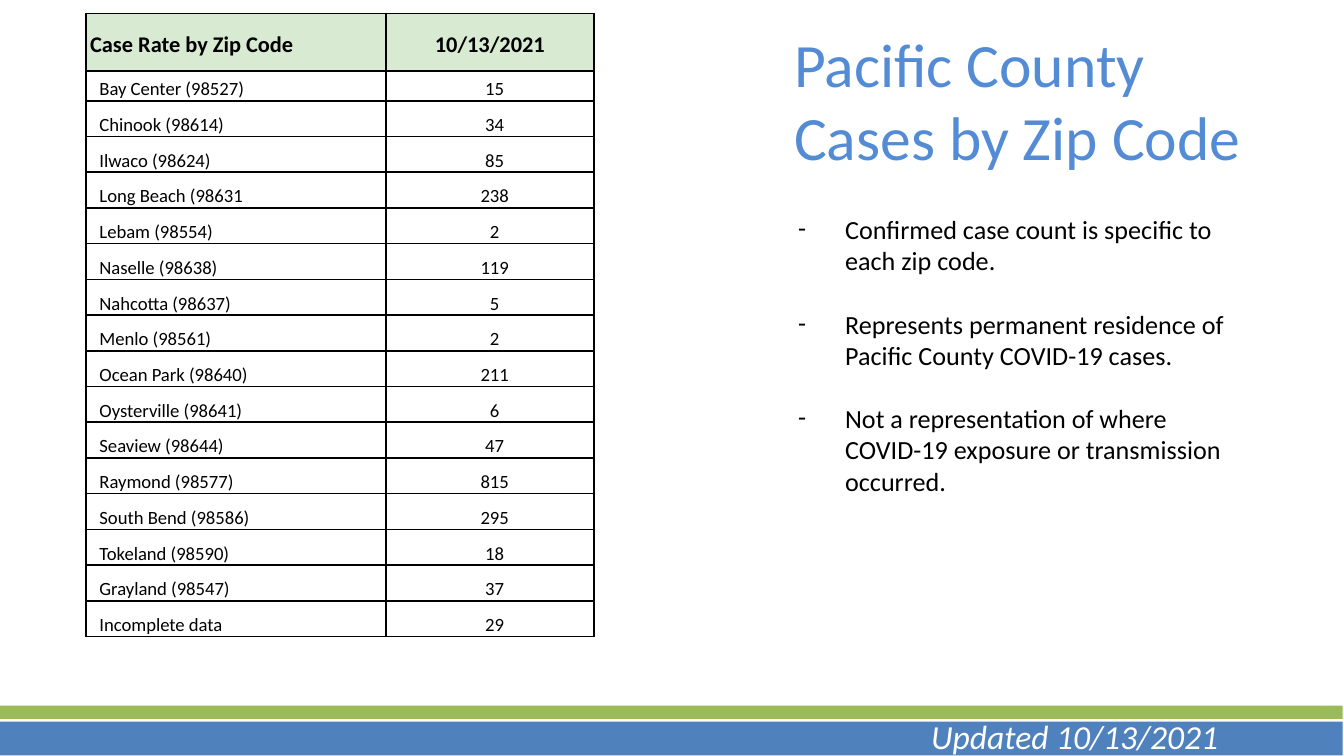
from dataclasses import dataclass

from lxml import etree
from pptx import Presentation
from pptx.dml.color import RGBColor
from pptx.enum import shapes, text
from pptx.oxml import ns
from pptx.util import Inches, Pt


@dataclass(frozen=True)
class Theme:
    font: str = "Calibri"
    title_color: str = "538CD5"
    ink: str = "000000"
    white: str = "FFFFFF"
    green: str = "9BBB59"
    blue: str = "4F81BD"
    header_fill: str = "D9EAD3"
    title_size: float = 33
    bullet_size: float = 14
    footer_size: float = 18
    header_size: float = 12
    cell_size: float = 10


@dataclass(frozen=True)
class Box:
    left: float
    top: float
    width: float
    height: float

    def lengths(self) -> tuple:
        return tuple(map(Inches, (self.left, self.top, self.width, self.height)))


@dataclass(frozen=True)
class ZipCount:
    place: str
    cases: int


THEME = Theme()
ZIP_COUNTS = [
    ZipCount("Bay Center (98527)", 15),
    ZipCount("Chinook (98614)", 34),
    ZipCount("Ilwaco (98624)", 85),
    ZipCount("Long Beach (98631", 238),
    ZipCount("Lebam (98554)", 2),
    ZipCount("Naselle (98638)", 119),
    ZipCount("Nahcotta (98637)", 5),
    ZipCount("Menlo (98561)", 2),
    ZipCount("Ocean Park (98640)", 211),
    ZipCount("Oysterville (98641)", 6),
    ZipCount("Seaview (98644)", 47),
    ZipCount("Raymond (98577)", 815),
    ZipCount("South Bend (98586)", 295),
    ZipCount("Tokeland (98590)", 18),
    ZipCount("Grayland (98547)", 37),
    ZipCount("Incomplete data", 29),
]
TITLE_LINES = ["Pacific County", "Cases by Zip Code"]
BULLETS = [
    "Confirmed case count is specific to each zip code.",
    "Represents permanent residence of Pacific County COVID-19 cases.",
    "Not a representation of where COVID-19 exposure or transmission occurred.",
]


def style_runs(paragraph, size: float, color: str, bold=False, italic=False) -> None:
    for run in paragraph.runs:
        run.font.name = THEME.font
        run.font.size = Pt(size)
        run.font.bold = bold
        run.font.italic = italic
        run.font.color.rgb = RGBColor.from_string(color)


def add_color(parent, color: str) -> None:
    etree.SubElement(parent, ns.qn("a:srgbClr"), val=color)


def add_dash(paragraph) -> None:
    properties = paragraph._p.get_or_add_pPr()
    properties.set("marL", str(Inches(0.38)))
    properties.set("indent", str(Inches(-0.35)))
    add_color(etree.SubElement(properties, ns.qn("a:buClr")), THEME.ink)
    etree.SubElement(properties, ns.qn("a:buFont"), typeface=THEME.font)
    etree.SubElement(properties, ns.qn("a:buChar"), char="-")


def add_borders(cell) -> None:
    properties = cell._tc.get_or_add_tcPr()
    for side in ("lnL", "lnR", "lnT", "lnB"):
        line = etree.SubElement(properties, ns.qn(f"a:{side}"), w=str(Pt(1)))
        add_color(etree.SubElement(line, ns.qn("a:solidFill")), THEME.ink)


def add_text_frame(slide, box: Box):
    frame = slide.shapes.add_textbox(*box.lengths()).text_frame
    frame.word_wrap = True
    return frame


def add_bar(slide, box: Box, color: str) -> None:
    bar = slide.shapes.add_shape(shapes.MSO_SHAPE.RECTANGLE, *box.lengths())
    bar.shadow.inherit = False
    bar.fill.solid()
    bar.fill.fore_color.rgb = RGBColor.from_string(color)
    bar.line.fill.background()


def fill_cell(cell, content: str, header: bool, centered: bool) -> None:
    cell.vertical_anchor = text.MSO_ANCHOR.BOTTOM
    cell.margin_left = cell.margin_right = Inches(0.03)
    cell.margin_top = cell.margin_bottom = Inches(0.1 if header else 0)
    cell.text_frame.text = content
    paragraph = cell.text_frame.paragraphs[0]
    paragraph.line_spacing = 1.15
    if centered:
        paragraph.alignment = text.PP_ALIGN.CENTER
    if not header:
        paragraph._p.get_or_add_pPr().set("marL", str(Inches(0.07)))
    size = THEME.header_size if header else THEME.cell_size
    style_runs(paragraph, size, THEME.ink, bold=header)
    add_borders(cell)
    if header:
        cell.fill.solid()
        cell.fill.fore_color.rgb = RGBColor.from_string(THEME.header_fill)
    else:
        cell.fill.background()


def add_case_table(slide, box: Box) -> None:
    rows = [("Case Rate by Zip Code", "10/13/2021")]
    rows += [(entry.place, str(entry.cases)) for entry in ZIP_COUNTS]
    table = slide.shapes.add_table(len(rows), 2, *box.lengths()).table
    table.first_row = table.horz_banding = False
    for column, width in zip(table.columns, (2.23, 1.55)):
        column.width = Inches(width)
    # The first two rows have their own heights; the others share the rest
    heights = [0.43, 0.22]
    shared_count = len(rows) - len(heights)
    heights += [(box.height - sum(heights)) / shared_count] * shared_count
    for row_index, (values, height) in enumerate(zip(rows, heights)):
        table.rows[row_index].height = Inches(height)
        for column_index, value in enumerate(values):
            fill_cell(table.cell(row_index, column_index), value,
                      header=row_index == 0, centered=column_index == 1)


def add_message(slide, box: Box) -> None:
    frame = add_text_frame(slide, box)
    frame.text = "\n".join(TITLE_LINES + BULLETS)
    title_count = len(TITLE_LINES)
    for paragraph in frame.paragraphs[:title_count]:
        style_runs(paragraph, THEME.title_size, THEME.title_color)
    for index, paragraph in enumerate(frame.paragraphs[title_count:]):
        paragraph.space_before = Pt(17 if index else 21.5)
        add_dash(paragraph)
        style_runs(paragraph, THEME.bullet_size, THEME.ink)


def main() -> None:
    presentation = Presentation()
    # Widescreen, 16 to 9
    presentation.slide_width = Inches(10)
    presentation.slide_height = presentation.slide_width * 9 // 16
    slide = presentation.slides.add_slide(presentation.slide_layouts[6])

    # Title and notes on the right
    add_message(slide, Box(5.81, 0.14, 3.58, 5.12))

    # Footer bars and date
    add_bar(slide, Box(-0.01, 5.25, 10, 0.1), THEME.green)
    add_bar(slide, Box(-0.01, 5.37, 10, 0.25), THEME.blue)
    footer = add_text_frame(slide, Box(6.83, 5.28, 2.67, 0.4))
    footer.text = "Updated 10/13/2021"
    style_runs(footer.paragraphs[0], THEME.footer_size, THEME.white, italic=True)

    # Case counts on the left
    add_case_table(slide, Box(0.64, 0.1, 3.78, 4.64))

    presentation.save("out.pptx")


if __name__ == "__main__":
    main()
